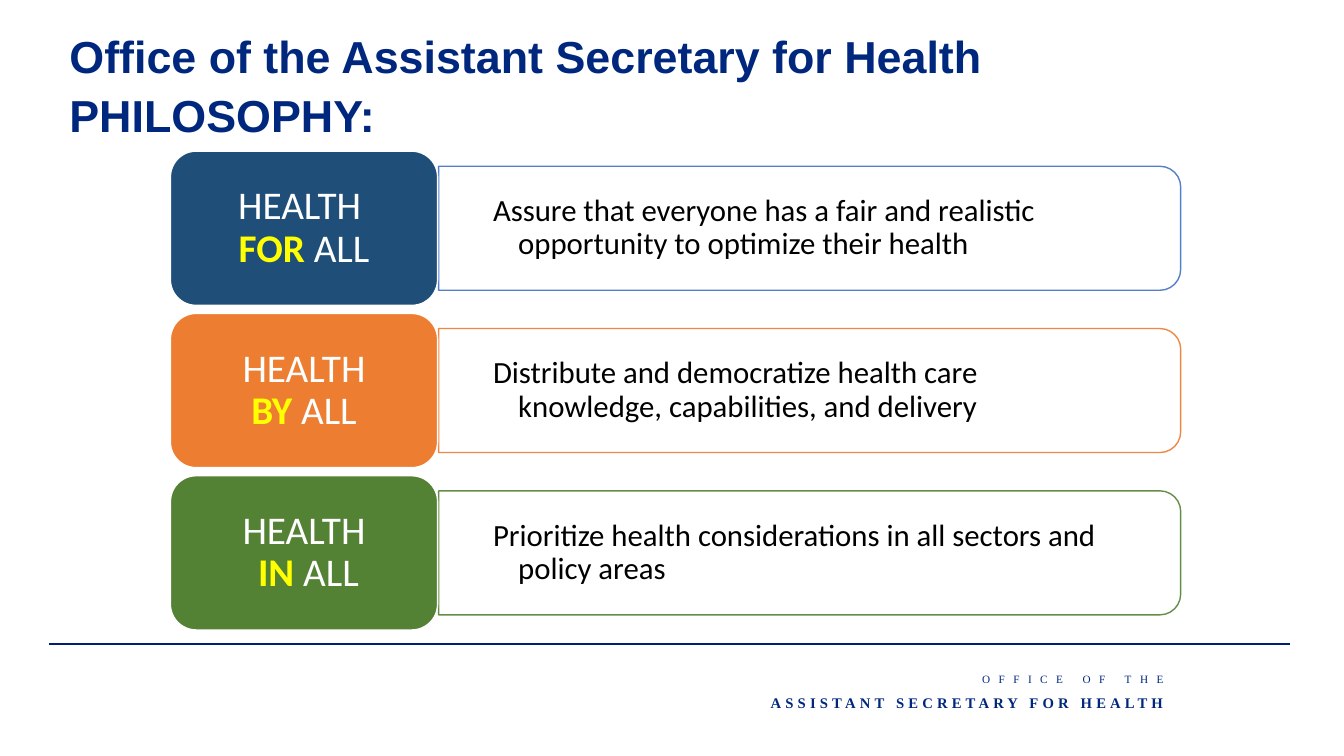
from dataclasses import dataclass

from lxml import etree
from pptx import Presentation
from pptx.dml.color import RGBColor
from pptx.enum.shapes import MSO_CONNECTOR, MSO_SHAPE
from pptx.enum.text import MSO_ANCHOR, PP_ALIGN
from pptx.oxml.ns import qn
from pptx.util import Emu, Pt

EMU_PER_PX = 9144  # 100 px to the inch
NAVY = RGBColor(0x00, 0x27, 0x7E)
RULE_NAVY = RGBColor(0x00, 0x1D, 0x78)
STEEL = RGBColor(0x1F, 0x4E, 0x79)
BLUE = RGBColor(0x44, 0x72, 0xC4)
ORANGE = RGBColor(0xED, 0x7D, 0x31)
GREEN = RGBColor(0x54, 0x82, 0x35)
YELLOW = RGBColor(0xFF, 0xFF, 0x00)
WHITE = RGBColor(0xFF, 0xFF, 0xFF)
BLACK = RGBColor(0x00, 0x00, 0x00)

ROUND_RECT = MSO_SHAPE.ROUNDED_RECTANGLE
ROUND_TOP_RECT = MSO_SHAPE.ROUND_2_SAME_RECTANGLE
STRAIGHT = MSO_CONNECTOR.STRAIGHT
LEFT, CENTER, RIGHT = PP_ALIGN.LEFT, PP_ALIGN.CENTER, PP_ALIGN.RIGHT
TOP, MIDDLE = MSO_ANCHOR.TOP, MSO_ANCHOR.MIDDLE

ROW_TOP, ROW_PITCH = 150, 161
LABEL_LEFT, LABEL_WIDTH, LABEL_HEIGHT = 169, 265, 153
PANEL_LEFT, PANEL_WIDTH, PANEL_HEIGHT = 435, 736, 123
GOAL_WIDTH, GOAL_HEIGHT = 730, 111


@dataclass(frozen=True)
class Span:
    text: str
    size: float
    font: str
    color: RGBColor
    bold: bool = False
    tracking: int = 0  # hundredths of a point


@dataclass(frozen=True)
class Principle:
    opening: str
    keyword: str
    ending: str
    goal: str
    fill: RGBColor
    outline: RGBColor


@dataclass(frozen=True)
class Caption:
    box: tuple[int, int, int, int]
    span: Span
    align: PP_ALIGN = RIGHT
    anchor: MSO_ANCHOR = TOP
    spacing: float = 1.0


PRINCIPLES = [
    Principle("HEALTH \v", "FOR ", "ALL",
              "Assure that everyone has a fair and realistic\v"
              "opportunity to optimize their health", STEEL, BLUE),
    Principle("HEALTH\v", "BY", " ALL",
              "Distribute and democratize health care\v"
              "knowledge, capabilities, and delivery", ORANGE, ORANGE),
    Principle("HEALTH\v ", "IN ", "ALL",
              "Prioritize health considerations in all sectors and\v"
              "policy areas", GREEN, GREEN),
]

CAPTIONS = [
    Caption((856, 662, 308, 24),
            Span("OFFICE OF THE", 8, "Times New Roman", NAVY, tracking=600)),
    Caption((540, 683, 624, 28),
            Span("ASSISTANT SECRETARY FOR HEALTH", 10.5, "Times New Roman",
                 NAVY, True, 300)),
    Caption((59, 15, 1150, 134),
            Span("Office of the Assistant Secretary for Health PHILOSOPHY:",
                 32, "Arial", NAVY, True), LEFT, MIDDLE, 1.1),
]


def px(length: float) -> Emu:
    return Emu(round(length * EMU_PER_PX))


def write(shape, spans: list[Span], align: PP_ALIGN, anchor: MSO_ANCHOR,
          spacing: float, insets: tuple[int, int] = (10, 5)):
    """Fill the shape with one paragraph; insets are horizontal and vertical."""
    across, down = (px(inset) for inset in insets)
    frame = shape.text_frame
    frame_format = {
        "word_wrap": True, "vertical_anchor": anchor,
        "margin_left": across, "margin_right": across,
        "margin_top": down, "margin_bottom": down,
    }
    for name, value in frame_format.items():
        setattr(frame, name, value)
    paragraph = frame.paragraphs[0]
    paragraph.alignment = align
    paragraph.line_spacing = spacing
    for span in spans:
        for index, line in enumerate(span.text.split("\v")):
            if index:
                paragraph.add_line_break()
            if not line:
                continue
            run = paragraph.add_run()
            run.text = line
            font_format = {"size": Pt(span.size), "name": span.font, "bold": span.bold}
            for name, value in font_format.items():
                setattr(run.font, name, value)
            run.font.color.rgb = span.color
            if span.tracking:
                run._r.get_or_add_rPr().set("spc", str(span.tracking))
    # Line breaks take the text size so that they do not change line height.
    for line_break in paragraph._p.findall(qn("a:br")):
        etree.SubElement(line_break, qn("a:rPr"), sz=str(round(spans[0].size * 100)))
    return paragraph


def add_block(slide, preset: MSO_SHAPE, box: tuple[float, float, float, float],
              fill: RGBColor, outline: RGBColor):
    block = slide.shapes.add_shape(preset, *map(px, box))
    block.shadow.inherit = False
    block.fill.solid()
    block.fill.fore_color.rgb = fill
    block.line.color.rgb = outline
    block.line.width = Pt(1)
    return block


def add_panel(slide, middle: float, outline: RGBColor) -> None:
    """Draw a panel turned a quarter so that its rounded corners face right."""
    center = PANEL_LEFT + PANEL_WIDTH / 2
    box = (center - PANEL_HEIGHT / 2, middle - PANEL_WIDTH / 2,
           PANEL_HEIGHT, PANEL_WIDTH)
    panel = add_block(slide, ROUND_TOP_RECT, box, WHITE, outline)
    panel.rotation = 90
    for color in panel._element.spPr.iter(qn("a:srgbClr")):
        etree.SubElement(color, qn("a:alpha"), val="90000")


def add_principle(slide, principle: Principle, top: int) -> None:
    middle = top + LABEL_HEIGHT / 2
    add_panel(slide, middle, principle.outline)

    goal = slide.shapes.add_textbox(
        px(PANEL_LEFT), px(middle - GOAL_HEIGHT / 2), px(GOAL_WIDTH), px(GOAL_HEIGHT))
    paragraph = write(goal, [Span(principle.goal, 22, "Calibri", BLACK)],
                      LEFT, MIDDLE, 0.9, (27, 14))
    properties = paragraph._p.get_or_add_pPr()
    properties.set("marL", str(px(52)))
    properties.set("indent", str(px(-25)))

    label = add_block(slide, ROUND_RECT, (LABEL_LEFT, top, LABEL_WIDTH, LABEL_HEIGHT),
                      principle.fill, WHITE)
    write(label, [Span(principle.opening, 28, "Calibri", WHITE),
                  Span(principle.keyword, 28, "Calibri", YELLOW, True),
                  Span(principle.ending, 28, "Calibri", WHITE)],
          CENTER, MIDDLE, 0.9, (12, 6))


def add_footer_rule(slide) -> None:
    rule = slide.shapes.add_connector(STRAIGHT, px(49), px(639), px(1279), px(639))
    rule.line.color.rgb = RULE_NAVY
    rule.line.width = Pt(1.5)
    etree.SubElement(rule._element.spPr, qn("a:effectLst"))


def add_caption(slide, caption: Caption) -> None:
    box = slide.shapes.add_textbox(*map(px, caption.box))
    write(box, [caption.span], caption.align, caption.anchor, caption.spacing)


def main() -> None:
    presentation = Presentation()
    presentation.slide_width = px(1333)
    presentation.slide_height = px(750)
    slide = presentation.slides.add_slide(presentation.slide_layouts[6])
    add_footer_rule(slide)
    for row, principle in enumerate(PRINCIPLES):
        add_principle(slide, principle, ROW_TOP + row * ROW_PITCH)
    for caption in CAPTIONS:
        add_caption(slide, caption)
    presentation.save("out.pptx")


if __name__ == "__main__":
    main()
